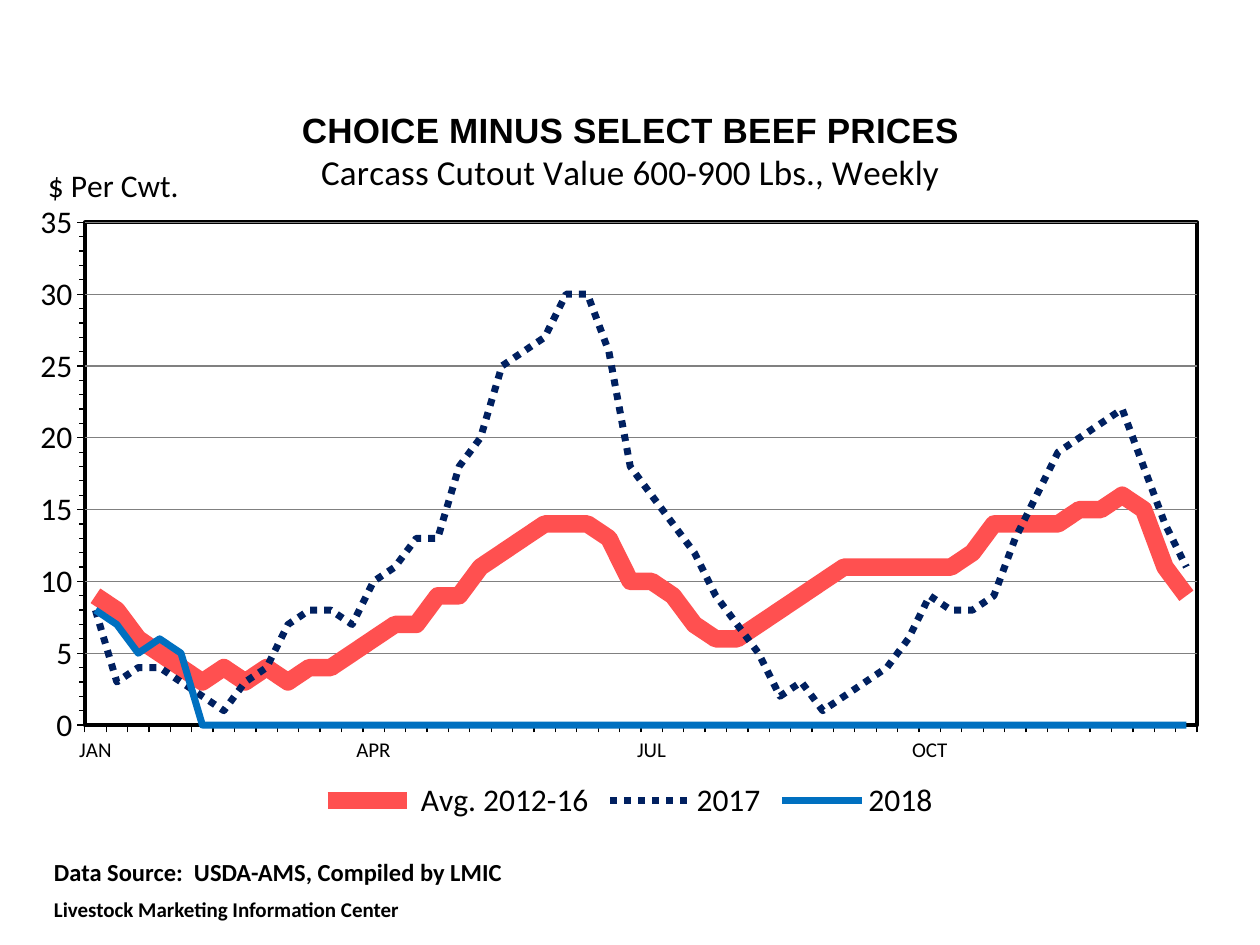
"""Build the slide on weekly choice minus select beef prices."""
from dataclasses import dataclass
from typing import Any, Optional

from lxml import etree
from pptx import Presentation
from pptx.chart.data import CategoryChartData
from pptx.dml.color import RGBColor
from pptx.enum.chart import XL_CHART_TYPE, XL_LEGEND_POSITION, XL_TICK_LABEL_POSITION, XL_TICK_MARK
from pptx.enum.dml import MSO_LINE
from pptx.enum.text import MSO_AUTO_SIZE
from pptx.oxml import parse_xml
from pptx.oxml.ns import nsdecls, qn
from pptx.util import Pt

LINE = XL_CHART_TYPE.LINE
BOTTOM = XL_LEGEND_POSITION.BOTTOM
LOW = XL_TICK_LABEL_POSITION.LOW
OUT = XL_TICK_MARK.OUTSIDE
NONE = XL_TICK_MARK.NONE
DOT = MSO_LINE.ROUND_DOT
GROW = MSO_AUTO_SIZE.SHAPE_TO_FIT_TEXT

COLORS = {"ink": "000000", "paper": "FFFFFF", "grid": "808080",
          "mean": "FF5050", "last": "002060", "now": "0070C0"}
WEEKS = 52
MONTHS = {0: "JAN", 13: "APR", 26: "JUL", 39: "OCT"}


@dataclass
class Trend:
    """One price line of the chart."""
    name: str
    color: str
    width: float
    vals: list[Optional[int]]
    dash: Any = None


@dataclass
class Words:
    """One styled line of text."""
    text: str
    size: float
    bold: bool = False
    face: str = "Calibri"
    space: float = 0


TRENDS = [
    Trend(" Avg. 2012-16", "mean", 10, [
        9, 8, 6, 5, 4, 3, 4, 3, 4, 3, 4, 4, 5, 6, 7, 7, 9, 9, 11, 12, 13, 14, 14, 14, 13, 10,
        10, 9, 7, 6, 6, 7, 8, 9, 10, 11, 11, 11, 11, 11, 11, 12, 14, 14, 14, 14, 15, 15, 16, 15, 11, 9]),
    Trend("2017", "last", 4, [
        8, 3, 4, 4, 3, 2, 1, 3, 4, 7, 8, 8, 7, 10, 11, 13, 13, 18, 20, 25, 26, 27, 30, 30, 26, 18,
        16, 14, 12, 9, 7, 5, 2, 3, 1, 2, 3, 4, 6, 9, 8, 8, 9, 13, 16, 19, 20, 21, 22, 18, 14, 11], DOT),
    Trend("2018", "now", 4, [8, 7, 5, 6, 5] + [None] * (WEEKS - 5)),
]
HEAD = [Words("CHOICE MINUS SELECT BEEF PRICES", 20, True, "Arial"),
        Words("Carcass Cutout Value 600-900 Lbs., Weekly", 20)]
UNIT = [Words("$ Per Cwt.", 18)]
NOTES = [Words("Data Source:  USDA-AMS, Compiled by LMIC", 14, True),
         Words("Livestock Marketing Information Center", 12, True, space=6)]


def apply(item: Any, form: dict[str, Any]) -> None:
    """Set each named value on the item."""
    for key, val in form.items():
        setattr(item, key, val)


def ink(font: Any, size: float, bold: bool = False, face: str = "Calibri") -> None:
    """Style a font in black."""
    apply(font, {"size": Pt(size), "bold": bold, "name": face})
    font.color.rgb = RGBColor.from_string(COLORS["ink"])


def stroke(line: Any, color: str, width: float) -> None:
    """Give a line its colour and width."""
    line.color.rgb = RGBColor.from_string(COLORS[color])
    line.width = Pt(width)


def write(frame: Any, lines: list[Words]) -> None:
    """Fill a text frame, one paragraph to a line."""
    for num, words in enumerate(lines):
        para = frame.add_paragraph() if num else frame.paragraphs[0]
        if words.space:
            para.space_before = Pt(words.space)
        run = para.add_run()
        run.text = words.text
        ink(run.font, words.size, words.bold, words.face)


def place(node: Any, index: int, inner: bool = False, **spots: float) -> None:
    """Fix a chart part at percentages of the chart size."""
    for old in node.findall(qn("c:layout")):
        node.remove(old)
    target = '<c:layoutTarget val="inner"/>' if inner else ""
    modes = "".join(f'<c:{key}Mode val="edge"/>' for key in "xy")
    sizes = "".join(f'<c:{key} val="{val / 100:.3f}"/>' for key, val in spots.items())
    node.insert(index, parse_xml(
        f'<c:layout {nsdecls("c")}><c:manualLayout>{target}{modes}{sizes}</c:manualLayout></c:layout>'))


def style_axes(chart: Any) -> None:
    """Set scale, ticks, labels and grid of both axes."""
    weeks, price = chart.category_axis, chart.value_axis
    apply(weeks, {"major_tick_mark": OUT, "minor_tick_mark": NONE, "tick_label_position": LOW,
                  "has_major_gridlines": False})
    apply(price, {"minimum_scale": 0, "maximum_scale": 35, "major_unit": 5, "minor_unit": 1,
                  "major_tick_mark": OUT, "minor_tick_mark": OUT, "has_major_gridlines": True})
    for axis in (weeks, price):
        stroke(axis.format.line, "ink", 0.75)
    stroke(price.major_gridlines.format.line, "grid", 0.75)
    ink(price.tick_labels.font, 18)
    apply(price.tick_labels, {"number_format": "General", "number_format_is_linked": False})
    title = price.axis_title
    write(title.text_frame, UNIT)
    body = title.element.find(".//" + qn("a:bodyPr"))
    for key, val in {"rot": "0", "vert": "horz"}.items():
        body.set(key, val)
    place(title.element, 1, x=1.7, y=9.9)
    skip = etree.Element(qn("c:tickLblSkip"), val="1")
    chart.element.find(".//" + qn("c:noMultiLvlLbl")).addprevious(skip)


def style_plot(chart: Any) -> None:
    """Frame the plot and place the title, plot and legend."""
    area = chart.element.find(".//" + qn("c:plotArea"))
    fill, edge = (f'<a:solidFill><a:srgbClr val="{COLORS[key]}"/></a:solidFill>' for key in ("paper", "ink"))
    area.append(parse_xml(
        f'<c:spPr {nsdecls("c", "a")}>{fill}<a:ln w="{Pt(2.25)}">{edge}</a:ln></c:spPr>'))
    place(area, 0, True, x=5.2, y=18.5, w=91.3, h=67.4)
    write(chart.chart_title.text_frame, HEAD)
    place(chart.element.find(".//" + qn("c:chart")).find(qn("c:title")), 1, x=22.7, y=2.8)
    chart.has_legend = True
    apply(chart.legend, {"position": BOTTOM, "include_in_layout": False})
    ink(chart.legend.font, 18)
    place(chart.element.find(".//" + qn("c:legend")), 1, x=24.2, y=94, w=51.5, h=6)
    chart.element.find(".//" + qn("c:dispBlanksAs")).set("val", "zero")


def add_trends(slide: Any) -> None:
    """Draw the line chart of all trends."""
    data = CategoryChartData()
    data.categories = [MONTHS.get(week, "") for week in range(WEEKS)]
    for trend in TRENDS:
        data.add_series(trend.name, trend.vals)
    chart = slide.shapes.add_chart(LINE, Pt(12.24), Pt(48.24), Pt(696.24), Pt(426.24), data).chart
    ink(chart.font, 12)
    for row, trend in zip(chart.plots[0].series, TRENDS):
        row.smooth = False
        stroke(row.format.line, trend.color, trend.width)
        if trend.dash:
            row.format.line.dash_style = trend.dash
    chart.plots[0].vary_by_categories = False
    style_axes(chart)
    style_plot(chart)


def add_notes(slide: Any) -> None:
    """Write the source lines below the chart."""
    frame = slide.shapes.add_textbox(Pt(23.76), Pt(486), Pt(324), Pt(46)).text_frame
    apply(frame, {"word_wrap": True, "auto_size": GROW})
    write(frame, NOTES)


def main() -> None:
    """Make the deck and save it."""
    deck = Presentation()
    apply(deck, {"slide_width": Pt(720), "slide_height": Pt(540)})
    slide = deck.slides.add_slide(deck.slide_layouts[6])
    add_trends(slide)
    add_notes(slide)
    deck.save("out.pptx")


if __name__ == "__main__":
    main()
